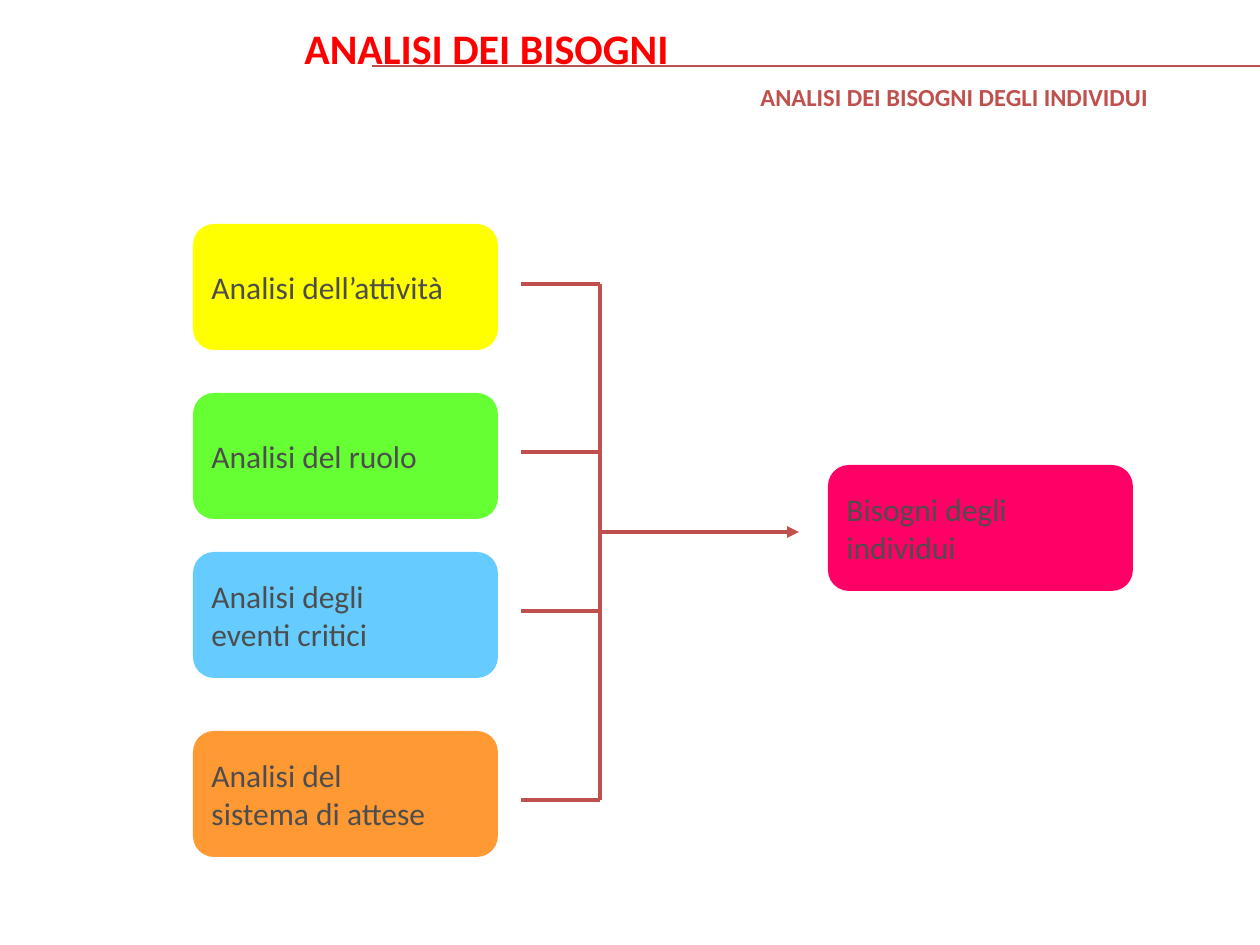
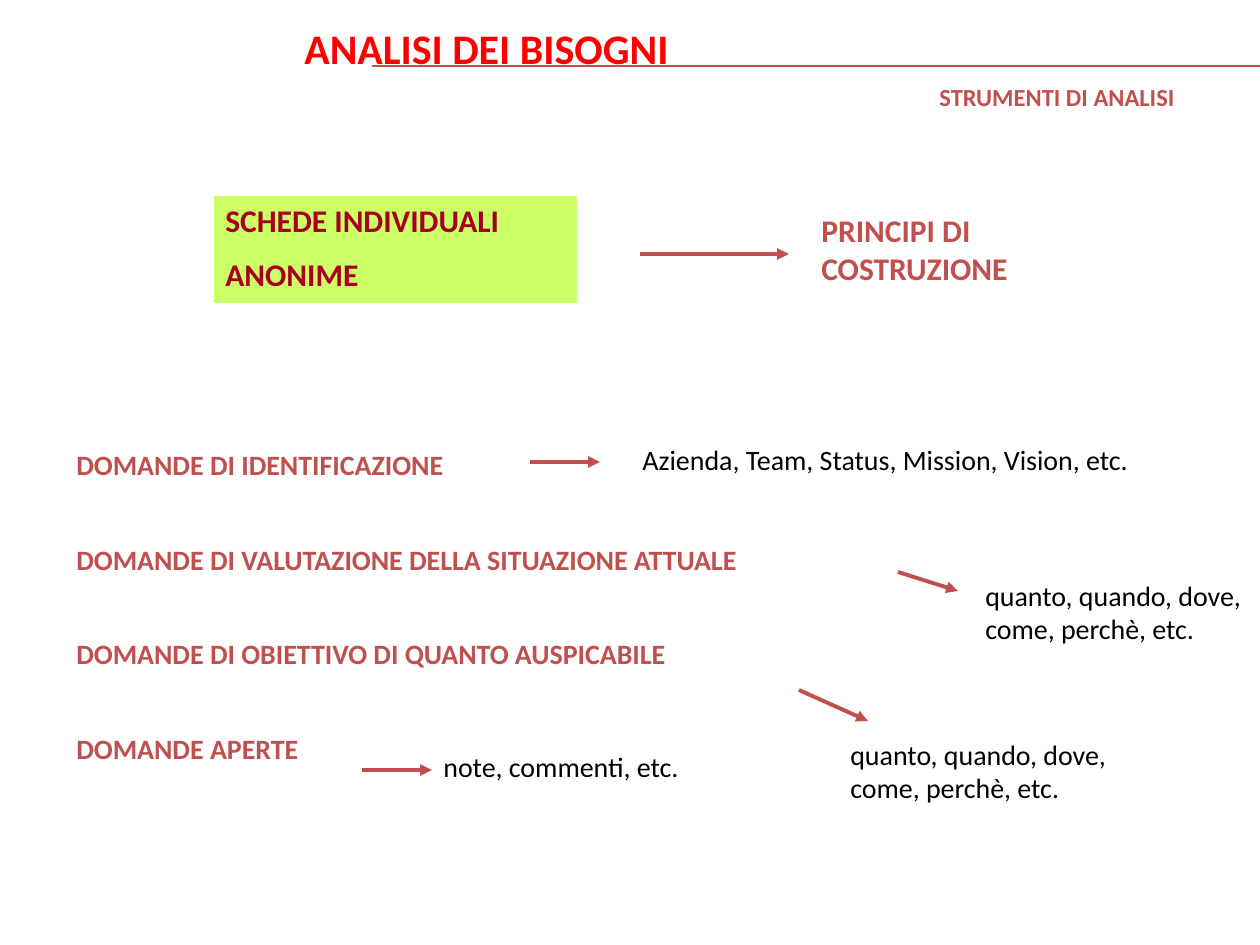
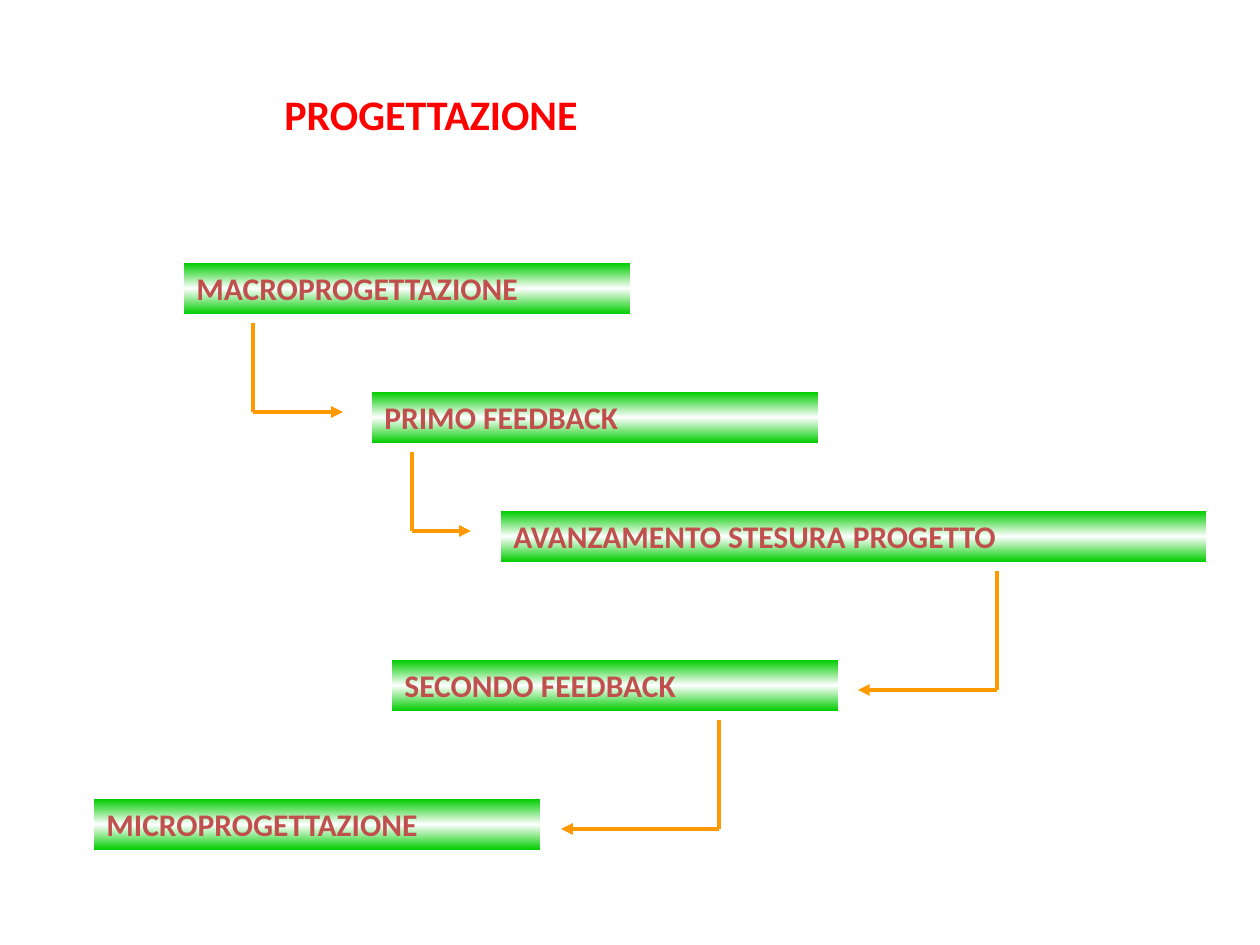
from copy import deepcopy

from pptx import Presentation
from pptx import util as u
from pptx.dml.color import RGBColor
from pptx.enum import shapes, text
from pptx.oxml.ns import qn
from lxml import etree

PX = 914400 / 126
FONT = "Calibri"
BRICK = RGBColor(0xC0, 0x50, 0x4D)
RED = RGBColor(0xFF, 0x00, 0x00)
CRIMSON = RGBColor(0xA5, 0x00, 0x21)
GREY = RGBColor(0x4D, 0x4D, 0x4D)
BLACK = RGBColor(0x00, 0x00, 0x00)
WHITE = RGBColor(0xFF, 0xFF, 0xFF)
YELLOW = RGBColor(0xFF, 0xFF, 0x00)
LIME = RGBColor(0x66, 0xFF, 0x33)
SKY = RGBColor(0x66, 0xCC, 0xFF)
ORANGE = RGBColor(0xFF, 0x99, 0x33)
AMBER = RGBColor(0xFF, 0x99, 0x00)
PINK = RGBColor(0xFF, 0x00, 0x66)
PALE_LIME = RGBColor(0xCC, 0xFF, 0x66)
GREEN = RGBColor(0x00, 0xCC, 0x00)
RECTANGLE = shapes.MSO_SHAPE.RECTANGLE
ROUNDED = shapes.MSO_SHAPE.ROUNDED_RECTANGLE


def add_text(slide, content, box, size=18, color=BRICK, bold=True, kind=None,
             fill=None, anchor=text.MSO_ANCHOR.TOP, gap=0):
    """Write one paragraph per line, in a text box or in a shape of the given kind."""
    place = [u.Emu(round(length * PX)) for length in box]
    if kind is None:
        shape = slide.shapes.add_textbox(*place)
    else:
        shape = slide.shapes.add_shape(kind, *place)
        shape.shadow.inherit = False
        shape.line.fill.background()
    if fill is not None:
        shape.fill.solid()
        shape.fill.fore_color.rgb = fill
    frame = shape.text_frame
    frame.word_wrap = True
    frame.vertical_anchor = anchor
    for index, line in enumerate(content.split("\n")):
        paragraph = frame.add_paragraph() if index else frame.paragraphs[0]
        paragraph.alignment = text.PP_ALIGN.LEFT
        paragraph.space_before = u.Pt(gap if index else 0)
        run = paragraph.add_run()
        run.text = line
        run.font.name = FONT
        run.font.size = u.Pt(size)
        run.font.bold = bold
        run.font.color.rgb = color
    return shape


def add_line(slide, start, end, color=BRICK, width=2.25, arrow=False):
    points = [u.Emu(round(length * PX)) for length in (*start, *end)]
    connector = slide.shapes.add_connector(shapes.MSO_CONNECTOR.STRAIGHT, *points)
    connector.line.color.rgb = color
    connector.line.width = u.Pt(width)
    properties = connector.element.spPr
    if arrow:
        etree.SubElement(properties.find(qn("a:ln")), qn("a:tailEnd"), type="triangle")
    etree.SubElement(properties, qn("a:effectLst"))


presentation = Presentation()
presentation.slide_width = u.Inches(10)
presentation.slide_height = u.Inches(7.5)
needs_slide, tools_slide, design_slide = [
    presentation.slides.add_slide(presentation.slide_layouts[6]) for _ in range(3)]

# Header shared by the two slides on needs analysis
for slide, subtitle, left, width in (
        (needs_slide, "ANALISI DEI BISOGNI DEGLI INDIVIDUI", 748, 496),
        (tools_slide, "STRUMENTI DI ANALISI", 927, 307)):
    add_text(slide, subtitle, (left, 76, width, 42), size=14)
    add_line(slide, (372, 66), (1260, 66), width=1.5)
    add_text(slide, "ANALISI DEI BISOGNI", (292, 16, 496, 63), size=24, color=RED)

# Slide 1: four analyses lead to the needs
for content, left, top, fill in (
        ("Analisi dell’attività", 193, 224, YELLOW),
        ("Analisi del ruolo", 193, 393, LIME),
        ("Analisi degli\neventi critici", 193, 552, SKY),
        ("Analisi del\nsistema di attese", 193, 731, ORANGE),
        ("Bisogni degli\nindividui", 828, 465, PINK)):
    add_text(needs_slide, content, (left, top, 305, 126), color=GREY, bold=False,
             kind=ROUNDED, fill=fill, anchor=text.MSO_ANCHOR.MIDDLE)
branches = (284, 452, 611, 800)
trunk = 600
add_line(needs_slide, (trunk, branches[0]), (trunk, branches[-1]))
for y in branches:
    add_line(needs_slide, (trunk, y), (521, y))
add_line(needs_slide, (trunk, 532), (799, 532), arrow=True)

# Slide 2: anonymous forms and their questions
form = add_text(tools_slide, "SCHEDE INDIVIDUALI\nANONIME", (213, 195, 365, 109),
                color=CRIMSON, kind=RECTANGLE, fill=PALE_LIME, gap=9)
form.line.color.rgb = WHITE
form.line.width = u.Pt(1)
add_text(tools_slide, "PRINCIPI DI COSTRUZIONE", (809, 205, 328, 88))
questions = "\n".join((
    "DOMANDE DI IDENTIFICAZIONE",
    "DOMANDE DI VALUTAZIONE DELLA SITUAZIONE ATTUALE",
    "DOMANDE DI OBIETTIVO DI QUANTO AUSPICABILE",
    "DOMANDE APERTE"))
add_text(tools_slide, questions, (64, 441, 853, 349), size=16, gap=35)
details = "quanto, quando, dove, come, perchè, etc."
for content, box in (
        ("Azienda, Team, Status, Mission, Vision, etc.", (630, 436, 596, 47)),
        (details, (973, 572, 287, 113)),
        (details, (838, 731, 287, 113)),
        ("note, commenti, etc.", (431, 743, 348, 47))):
    add_text(tools_slide, content, box, size=16, color=BLACK, bold=False)
for start, end in (
        ((640, 254), (789, 254)),
        ((530, 462), (600, 462)),
        ((898, 572), (958, 591)),
        ((799, 690), (868, 721)),
        ((362, 770), (432, 770))):
    add_line(tools_slide, start, end, arrow=True)

# Slide 3: design steps, each linked to the next by an elbow
add_text(design_slide, "PROGETTAZIONE", (272, 82, 784, 63), size=24, color=RED)
for content, left, top, width in (
        ("MACROPROGETTAZIONE", 184, 263, 446),
        ("PRIMO FEEDBACK", 372, 392, 446),
        ("AVANZAMENTO STESURA PROGETTO", 501, 511, 705),
        ("SECONDO FEEDBACK", 392, 660, 446),
        ("MICROPROGETTAZIONE", 94, 799, 446)):
    bar = add_text(design_slide, content, (left, top, width, 51), kind=RECTANGLE)
    bar.fill.gradient()
    bar.fill.gradient_angle = 270
    edge, middle = bar.fill.gradient_stops
    edge.color.rgb, edge.position = GREEN, 0
    middle.color.rgb, middle.position = WHITE, 0.5
    stop_list = bar.element.spPr.find(".//" + qn("a:gsLst"))
    last_stop = deepcopy(stop_list[0])
    last_stop.set("pos", "100000")
    stop_list.append(last_stop)
for x, top, bottom, tip in (
        (253, 323, 412, 343),
        (412, 452, 531, 471),
        (997, 571, 690, 858),
        (719, 720, 829, 561)):
    add_line(design_slide, (x, top), (x, bottom), color=AMBER)
    add_line(design_slide, (x, bottom), (tip, bottom), color=AMBER, arrow=True)

presentation.save("out.pptx")
